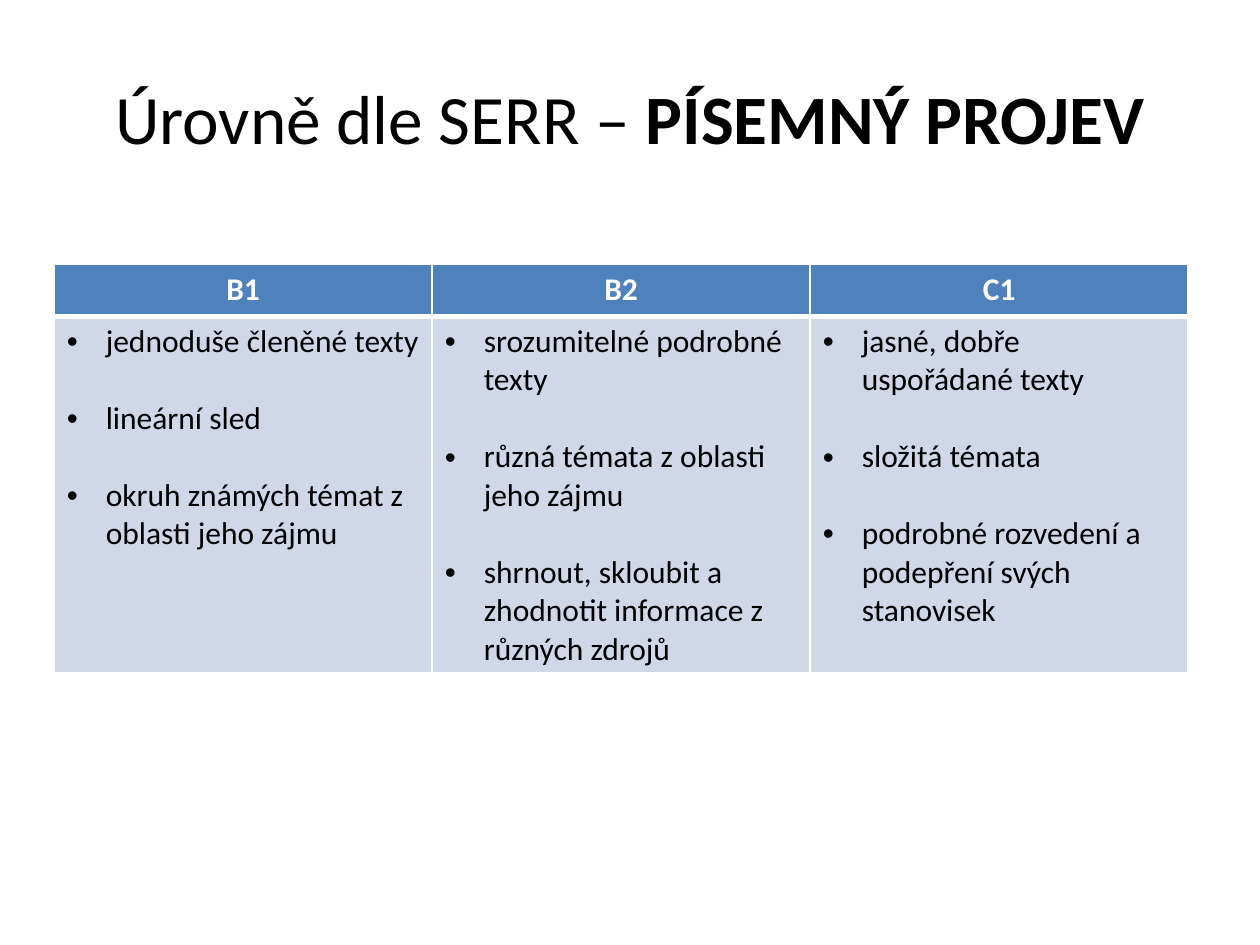
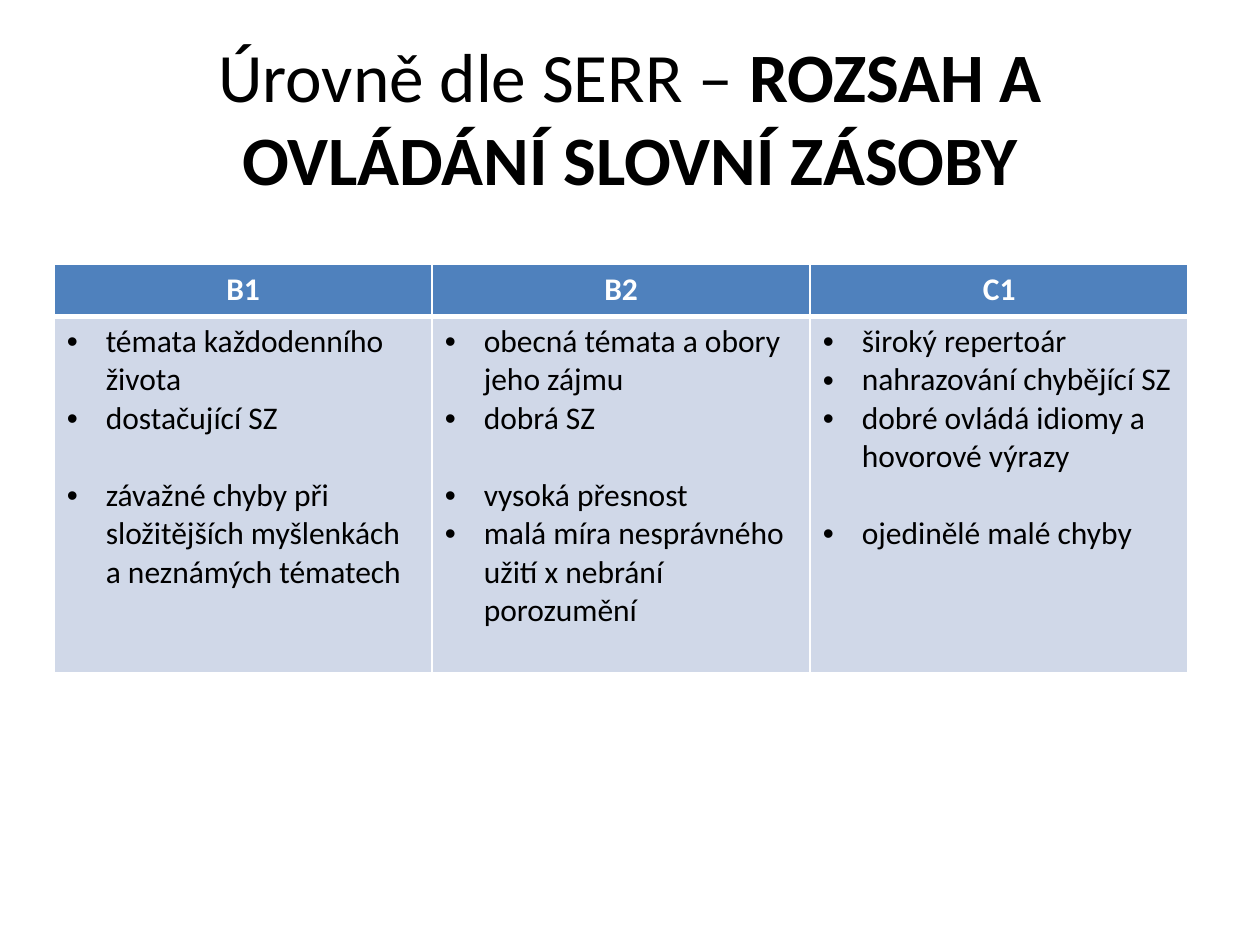
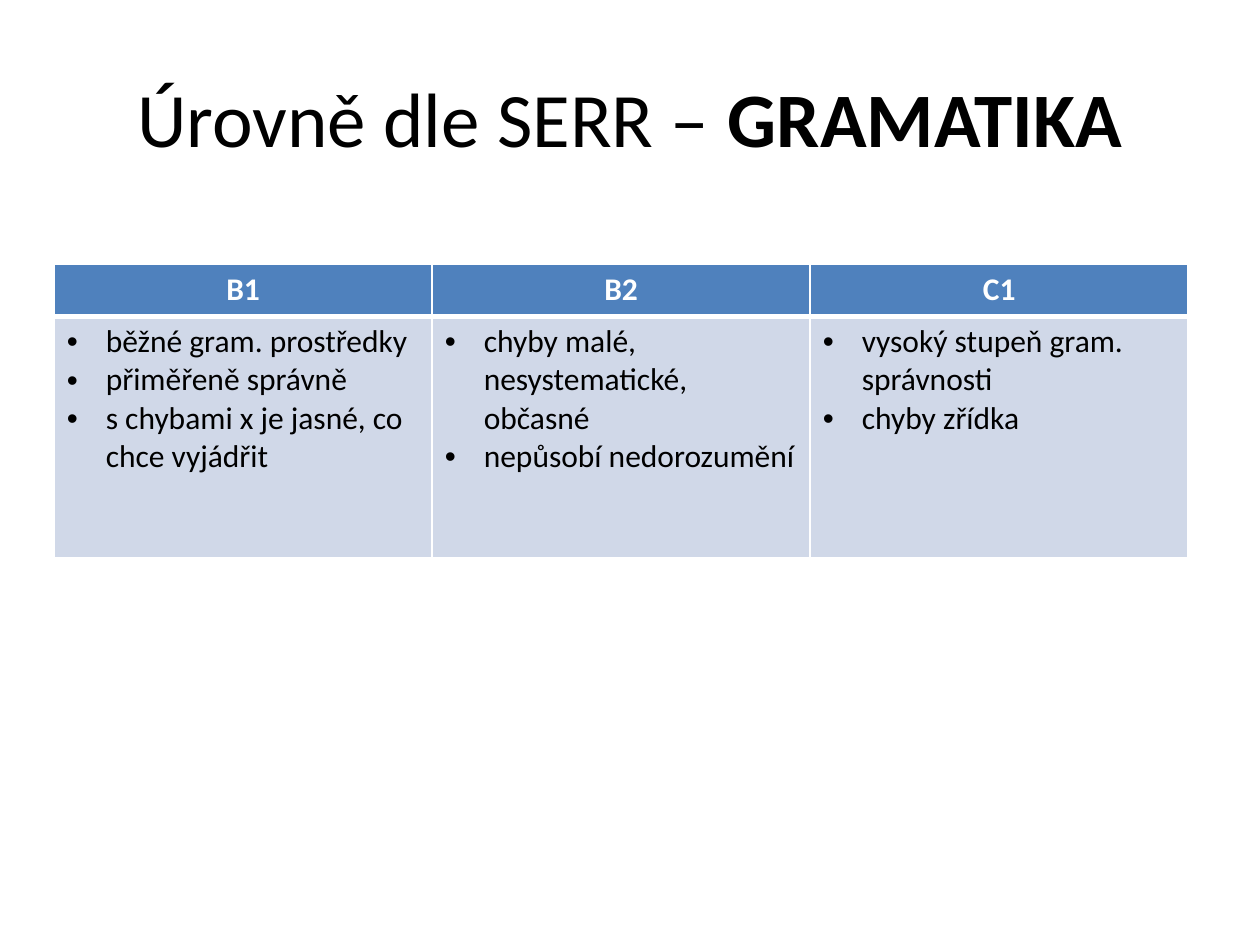
from lxml import etree
from pptx import Presentation
from pptx import util as u
from pptx.dml import color
from pptx.enum import text
from pptx.oxml import ns

TITLE_START = "Úrovně dle SERR – "
LEVELS = ["B1", "B2", "C1"]

# Each level holds groups of bullets; groups are set apart by one line.
SLIDES = [
    {
        "topic": "PÍSEMNÝ PROJEV", "title_size": 39.6, "body_height": 2.83,
        "levels": [
            [["jednoduše členěné texty"], ["lineární sled"],
             ["okruh známých témat z oblasti jeho zájmu"]],
            [["srozumitelné podrobné texty"], ["různá témata z oblasti jeho zájmu"],
             ["shrnout, skloubit a zhodnotit informace z různých zdrojů"]],
            [["jasné, dobře uspořádané texty"], ["složitá témata"],
             ["podrobné rozvedení a podepření svých stanovisek"]],
        ],
    },
    {
        "topic": "ROZSAH A OVLÁDÁNÍ SLOVNÍ ZÁSOBY", "title_size": 39.6, "body_height": 2.83,
        "levels": [
            [["témata každodenního života", "dostačující SZ"],
             ["závažné chyby při složitějších myšlenkách a neznámých tématech"]],
            [["obecná témata a obory jeho zájmu", "dobrá SZ"],
             ["vysoká přesnost", "malá míra nesprávného užití x nebrání porozumění"]],
            [["široký repertoár", "nahrazování chybějící SZ",
              "dobré ovládá idiomy a hovorové výrazy"],
             ["ojedinělé malé chyby"]],
        ],
    },
    {
        "topic": "GRAMATIKA", "title_size": 44, "body_height": 1.92,
        "levels": [
            [["běžné gram. prostředky", "přiměřeně správně",
              "s chybami x je jasné, co chce vyjádřit"]],
            [["chyby malé, nesystematické, občasné", "nepůsobí nedorozumění"]],
            [["vysoký stupeň gram. správnosti", "chyby zřídka"]],
        ],
    },
]

FONT = "Calibri"
BLACK, WHITE, HEADER_FILL, BODY_FILL = "000000", "FFFFFF", "4F81BD", "D0D8E8"
TEXT_SIZE, GROUP_GAP = 18, 22
HEADER_HEIGHT, COLUMN_WIDTH, INDENT = 0.41, 3, 0.31
THIN, THICK = 1, 3


def rgb(value):
    return color.RGBColor.from_string(value)


def add_run(paragraph, words, size, ink, bold=False):
    run = paragraph.add_run()
    run.text = words
    run.font.name = FONT
    run.font.size = u.Pt(size)
    run.font.bold = bold
    run.font.color.rgb = rgb(ink)


def add_title(slide, topic, size):
    box = slide.shapes.add_textbox(u.Inches(0.5), u.Inches(0.3), u.Inches(9), u.Inches(1.25))
    frame = box.text_frame
    frame.word_wrap = True
    frame.vertical_anchor = text.MSO_ANCHOR.MIDDLE
    paragraph = frame.paragraphs[0]
    paragraph.alignment = text.PP_ALIGN.CENTER
    add_run(paragraph, TITLE_START, size, BLACK)
    add_run(paragraph, topic, size, BLACK, bold=True)


def style_cell(cell, fill, top, bottom):
    properties = cell._tc.get_or_add_tcPr()
    for side, width in (("L", THIN), ("R", THIN), ("T", top), ("B", bottom)):
        line = etree.SubElement(properties, ns.qn(f"a:ln{side}"), w=str(u.Pt(width)))
        solid = etree.SubElement(line, ns.qn("a:solidFill"))
        etree.SubElement(solid, ns.qn("a:srgbClr"), val=WHITE)
    cell.fill.solid()
    cell.fill.fore_color.rgb = rgb(fill)


def add_bullet(paragraph, words, opens_group):
    if opens_group:
        paragraph.space_before = u.Pt(GROUP_GAP)
    properties = paragraph._p.get_or_add_pPr()
    properties.set("marL", str(u.Inches(INDENT)))
    properties.set("indent", str(-u.Inches(INDENT)))
    etree.SubElement(properties, ns.qn("a:buFont"), typeface="Arial")
    etree.SubElement(properties, ns.qn("a:buChar"), char="•")
    add_run(paragraph, words, TEXT_SIZE, BLACK)


def fill_body(cell, groups):
    frame = cell.text_frame
    for group_index, group in enumerate(groups):
        for bullet_index, words in enumerate(group):
            first = group_index == bullet_index == 0
            paragraph = frame.paragraphs[0] if first else frame.add_paragraph()
            add_bullet(paragraph, words, group_index > 0 and bullet_index == 0)


def add_level_table(slide, levels, body_height):
    table = slide.shapes.add_table(
        2, len(LEVELS), u.Inches(0.43), u.Inches(2.1),
        u.Inches(COLUMN_WIDTH * len(LEVELS)), u.Inches(HEADER_HEIGHT + body_height)).table
    table.horz_banding = False
    table.rows[0].height = u.Inches(HEADER_HEIGHT)
    table.rows[1].height = u.Inches(body_height)
    for column, (level, groups) in enumerate(zip(LEVELS, levels)):
        table.columns[column].width = u.Inches(COLUMN_WIDTH)
        header, body = table.cell(0, column), table.cell(1, column)
        style_cell(header, HEADER_FILL, THIN, THICK)
        style_cell(body, BODY_FILL, THICK, THIN)
        paragraph = header.text_frame.paragraphs[0]
        paragraph.alignment = text.PP_ALIGN.CENTER
        add_run(paragraph, level, TEXT_SIZE, WHITE, bold=True)
        fill_body(body, groups)


def main():
    presentation = Presentation()
    presentation.slide_width = u.Inches(10)
    presentation.slide_height = u.Inches(7.5)
    for content in SLIDES:
        slide = presentation.slides.add_slide(presentation.slide_layouts[6])
        add_title(slide, content["topic"], content["title_size"])
        add_level_table(slide, content["levels"], content["body_height"])
    presentation.save("out.pptx")


if __name__ == "__main__":
    main()
